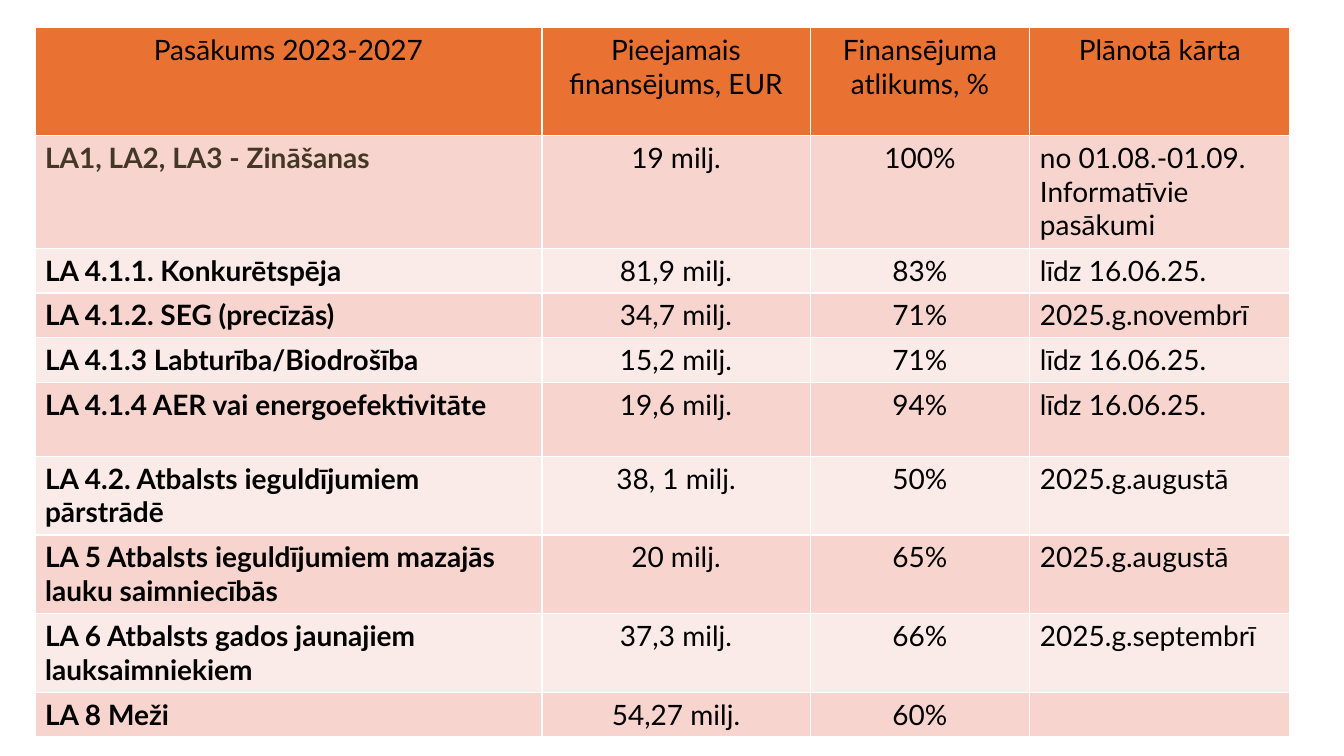
from pptx import Presentation
from pptx.dml.color import RGBColor as RGB
from pptx.enum.text import PP_ALIGN as ALIGN
from pptx.util import Pt

COLORS = {
    "header": "E97132",
    "band_dark": "F7D5CE",
    "band_light": "FBEBE8",
    "text": "000000",
    "muted": "443728",
}
COL_WIDTHS = [362.16, 191.52, 156.96, 185.76]
HEADER_HEIGHT = 77.04
HEADERS = ["Pasākums 2023-2027", "Pieejamais finansējums, EUR",
           "Finansējuma atlikums, %", "Plānotā kārta"]
# Row height, then measure, funding, remainder and planned round
MEASURES = [
    (80.64, "LA1, LA2, LA3 - Zināšanas", "19 milj.", "100%",
     "no 01.08.-01.09. Informatīvie pasākumi"),
    (31.9, "LA 4.1.1. Konkurētspēja", "81,9 milj.", "83%", "līdz 16.06.25."),
    (31.9, "LA 4.1.2. SEG (precīzās)", "34,7 milj.", "71%", "2025.g.novembrī"),
    (31.9, "LA 4.1.3 Labturība/Biodrošība", "15,2 milj.", "71%", "līdz 16.06.25."),
    (52.9, "LA 4.1.4 AER vai energoefektivitāte", "19,6 milj.", "94%", "līdz 16.06.25."),
    (56.16, "LA 4.2. Atbalsts ieguldījumiem pārstrādē", "38, 1 milj.", "50%",
     "2025.g.augustā"),
    (56.16, "LA 5 Atbalsts ieguldījumiem mazajās lauku saimniecībās", "20 milj.", "65%",
     "2025.g.augustā"),
    (56.16, "LA 6 Atbalsts gados jaunajiem lauksaimniekiem", "37,3 milj.", "66%",
     "2025.g.septembrī"),
    (31.9, "LA 8 Meži", "54,27 milj.", "60%", ""),
]


def write(tf, text, size=20, color="text", bold=False, align=ALIGN.LEFT):
    p = tf.paragraphs[0]
    p.alignment = align
    if not text:
        p.font.size = Pt(size)
        return
    r = p.add_run()
    r.text = text
    r.font.name = "Lato"
    r.font.size = Pt(size)
    r.font.bold = bold
    r.font.color.rgb = RGB.from_string(COLORS[color])


def fill_cell(cell, fill, text, **text_format):
    cell.fill.solid()
    cell.fill.fore_color.rgb = RGB.from_string(COLORS[fill])
    write(cell.text_frame, text, **text_format)


def add_measures_table(s):
    heights = [HEADER_HEIGHT] + [height for height, *_ in MEASURES]
    table = s.shapes.add_table(
        len(heights), len(COL_WIDTHS), Pt(25), Pt(19.8),
        Pt(sum(COL_WIDTHS)), Pt(sum(heights))).table
    for column, width in zip(table.columns, COL_WIDTHS):
        column.width = Pt(width)
    for row, height in zip(table.rows, heights):
        row.height = Pt(height)

    for col, text in enumerate(HEADERS):
        fill_cell(table.cell(0, col), "header", text, align=ALIGN.CENTER)
    for row, (_, *texts) in enumerate(MEASURES, start=1):
        band = "band_dark" if row % 2 else "band_light"
        for col, text in enumerate(texts):
            fill_cell(table.cell(row, col), band, text,
                      bold=col == 0,
                      color="muted" if (row, col) == (1, 0) else "text",
                      align=ALIGN.CENTER if col in (1, 2) else ALIGN.LEFT)


def main():
    prs = Presentation()
    prs.slide_width, prs.slide_height = Pt(960), Pt(540)
    s = prs.slides.add_slide(prs.slide_layouts[6])
    add_measures_table(s)
    prs.save("out.pptx")


if __name__ == "__main__":
    main()
